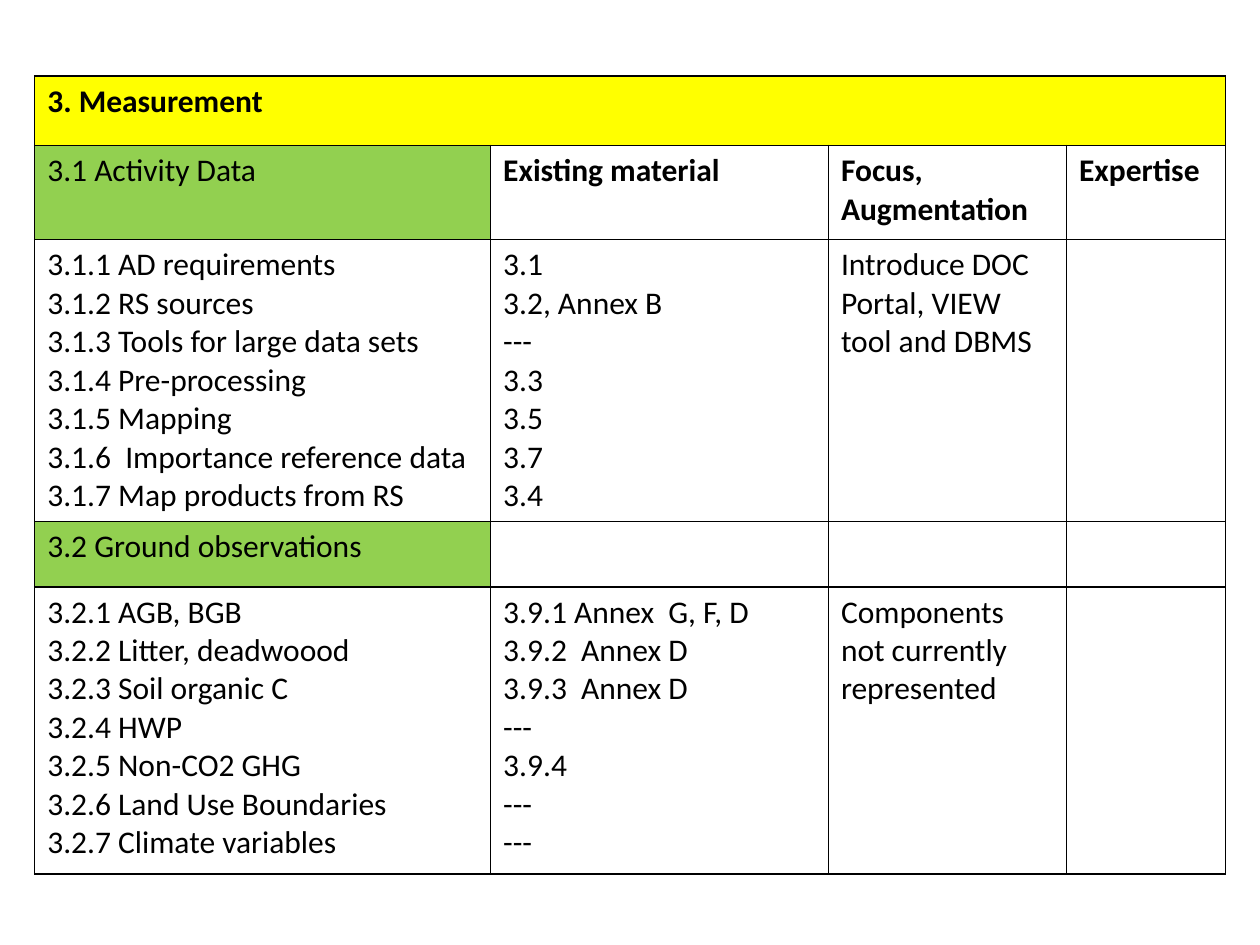
from dataclasses import dataclass

from lxml import etree
from pptx import Presentation
from pptx.dml.color import RGBColor
from pptx.enum.text import MSO_ANCHOR, PP_ALIGN
from pptx.oxml.ns import qn
from pptx.util import Cm, Pt

TOP, LEFT = MSO_ANCHOR.TOP, PP_ALIGN.LEFT
BLANK_LAYOUT = 6


@dataclass(frozen=True)
class Theme:
    font: str = "Calibri"
    size: int = 18
    text: str = "000000"
    border: str = "000000"
    border_width: int = 1
    plain: str = "FFFFFF"
    chapter: str = "FFFF00"
    section: str = "92D050"


@dataclass(frozen=True)
class Box:
    left: float
    top: float
    width: float
    height: float


THEME = Theme()
TABLE_BOX = Box(0.7, 1.53, 24.0, 15.88)
COLUMN_WIDTHS = [9.19, 6.81, 4.8, 3.2]
ROW_HEIGHTS = [1.4, 1.9, 5.68, 1.32, 5.79]

CHAPTER = "3. Measurement"
HEADINGS = ["3.1 Activity Data", "Existing material", "Focus, Augmentation", "Expertise"]
ACTIVITY_DATA = [
    ["3.1.1 AD requirements", "3.1.2 RS sources", "3.1.3 Tools for large data sets",
     "3.1.4 Pre-processing", "3.1.5 Mapping", "3.1.6  Importance reference data",
     "3.1.7 Map products from RS"],
    ["3.1", "3.2, Annex B", "---", "3.3", "3.5", "3.7", "3.4"],
    ["Introduce DOC Portal, VIEW tool and DBMS"],
    [],
]
GROUND_HEADING = "3.2 Ground observations"
GROUND_OBSERVATIONS = [
    ["3.2.1 AGB, BGB", "3.2.2 Litter, deadwoood", "3.2.3 Soil organic C", "3.2.4 HWP",
     "3.2.5 Non-CO2 GHG", "3.2.6 Land Use Boundaries", "3.2.7 Climate variables"],
    ["3.9.1 Annex  G, F, D", "3.9.2  Annex D", "3.9.3  Annex D", "---", "3.9.4",
     "---", "---"],
    ["Components not currently represented"],
    [],
]


def write_text(frame, lines, bold=False, color=THEME.text, size=THEME.size):
    """Write one paragraph per line."""
    for index, line in enumerate(lines):
        para = frame.paragraphs[0] if index == 0 else frame.add_paragraph()
        para.alignment = LEFT
        span = para.add_run()
        span.text = line
        span.font.name = THEME.font
        span.font.size = Pt(size)
        span.font.bold = bold
        span.font.color.rgb = RGBColor.from_string(color)


def draw_borders(cell):
    """Outline a cell; the lines come before its fill in the XML."""
    properties = cell._tc.get_or_add_tcPr()
    for index, side in enumerate(("a:lnL", "a:lnR", "a:lnT", "a:lnB")):
        line = etree.Element(qn(side), w=str(Pt(THEME.border_width)))
        fill = etree.SubElement(line, qn("a:solidFill"))
        etree.SubElement(fill, qn("a:srgbClr"), val=THEME.border)
        properties.insert(index, line)


def fill_cell(cell, lines=(), fill=THEME.plain, bold=False):
    cell.vertical_anchor = TOP
    cell.fill.solid()
    cell.fill.fore_color.rgb = RGBColor.from_string(fill)
    draw_borders(cell)
    write_text(cell.text_frame, lines, bold=bold)


def add_section(table, row, headings, columns):
    """Fill a heading row and the row of contents below it."""
    for column, lines in enumerate(columns):
        is_section = column == 0
        fill_cell(table.cell(row, column), headings[column],
                  fill=THEME.section if is_section else THEME.plain,
                  bold=not is_section)
        fill_cell(table.cell(row + 1, column), lines)


def add_outline_table(slide, box):
    table = slide.shapes.add_table(
        len(ROW_HEIGHTS), len(COLUMN_WIDTHS),
        Cm(box.left), Cm(box.top), Cm(box.width), Cm(box.height)).table
    table.first_row = table.horz_banding = False
    for column, width in zip(table.columns, COLUMN_WIDTHS):
        column.width = Cm(width)
    for row, height in zip(table.rows, ROW_HEIGHTS):
        row.height = Cm(height)

    # Chapter row across all columns
    last = len(COLUMN_WIDTHS) - 1
    table.cell(0, 0).merge(table.cell(0, last))
    for column in range(last + 1):
        fill_cell(table.cell(0, column), [CHAPTER] if column == 0 else [],
                  fill=THEME.chapter, bold=True)

    # Two sections, each a heading row and a contents row
    add_section(table, 1, [[heading] for heading in HEADINGS], ACTIVITY_DATA)
    add_section(table, 3, [[GROUND_HEADING], [], [], []], GROUND_OBSERVATIONS)


def main():
    deck = Presentation()
    deck.slide_width, deck.slide_height = Cm(25.4), Cm(19.05)
    slide = deck.slides.add_slide(deck.slide_layouts[BLANK_LAYOUT])
    add_outline_table(slide, TABLE_BOX)
    deck.save("out.pptx")


if __name__ == "__main__":
    main()
